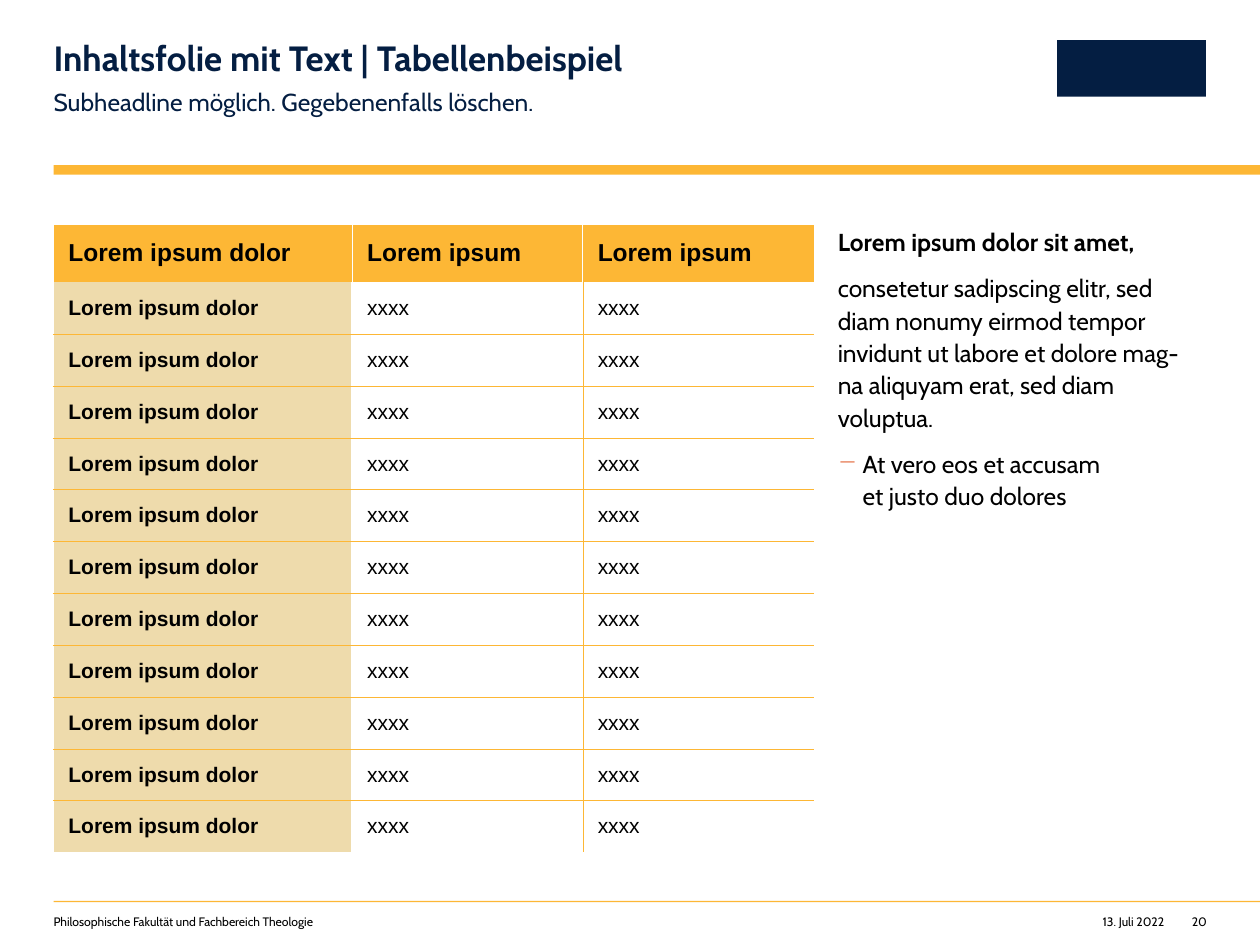
from copy import deepcopy

from lxml.etree import SubElement
from pptx import Presentation
from pptx.dml.color import RGBColor
from pptx.enum.shapes import MSO_SHAPE
from pptx.enum.text import MSO_ANCHOR, PP_ALIGN
from pptx.oxml.ns import qn
from pptx.util import Cm, Pt

# Content
COLORS = {"navy": "041E42", "orange": "FDB735", "sand": "EEDBAC",
          "rust": "E46D41", "black": "000000", "white": "FFFFFF"}
HEADINGS = ["Lorem ipsum dolor", "Lorem ipsum", "Lorem ipsum"]
ROWS = [["Lorem ipsum dolor", "xxxx", "xxxx"]] * 11

LEFT = 1.08
TABLE_TOP, TABLE_HEIGHT, HEADER_HEIGHT = 4.52, 12.67, 1.17
COLUMN_WIDTHS = [6.02, 4.65, 4.65]

# Left, top, width, height in cm
BARS = [
    ((LEFT, 3.33, 25.4 - LEFT, 0.19), "orange"),
    ((LEFT, 18.16, 25.4 - LEFT, 0.03), "orange"),
    ((21.31, 0.81, 3, 1.14), "navy"),  # logo placeholder
]

HEADLINE = {"size": 20, "bold": True, "color": "navy"}
SUBHEAD = {"size": 14, "color": "navy"}
BODY = {"size": 14}
SMALL = {"size": 7}
TIGHT = {"line_spacing": 0.9}
LOOSE = {"line_spacing": 1.1, "space_after": Pt(8)}
RIGHT = {"alignment": PP_ALIGN.RIGHT}

# Place, then paragraphs of text, font and paragraph format
TEXTS = [
    ((LEFT, 0.84, 14.25, 0.76),
     [("Inhaltsfolie mit Text | Tabellenbeispiel", HEADLINE, TIGHT)]),
    ((LEFT, 1.7, 14.25, 0.61),
     [("Subheadline möglich. Gegebenenfalls löschen.", SUBHEAD, LOOSE)]),
    ((16.89, TABLE_TOP, 6.93, TABLE_HEIGHT), [
        ("Lorem ipsum dolor sit amet,", {**BODY, "bold": True}, LOOSE),
        ("consetetur sadipscing elitr, sed diam nonumy eirmod tempor invidunt "
         "ut labore et dolore mag-na aliquyam erat, sed diam voluptua.", BODY, LOOSE),
        ("At vero eos et accusam\vet justo duo dolores", BODY, {**LOOSE, "level": 1}),
    ]),
    ((LEFT, 18.44, 11.4, 0.3),
     [("Philosophische Fakultät und Fachbereich Theologie", SMALL, {})]),
    ((21.97, 18.44, 1.5, 0.3), [("13. Juli 2022", SMALL, RIGHT)]),
    ((23.83, 18.44, 0.5, 0.3), [("20", SMALL, RIGHT)]),
]


def color(name):
    return RGBColor.from_string(COLORS[name])


def apply(target, values):
    for name, value in values.items():
        setattr(target, name, value)


def style_text(para, size, bold=False, font="Cabin", ink="black"):
    for span in para.runs:
        apply(span.font, {"name": font, "size": Pt(size), "bold": bold})
        span.font.color.rgb = color(ink)
    for line_break in para._p.findall(qn("a:br")):
        line_break.append(deepcopy(para.runs[0]._r.rPr))


def add_bullet(para):
    props = para._p.get_or_add_pPr()
    props.set("marL", str(Cm(0.5)))
    props.set("indent", str(-Cm(0.5)))
    tint = SubElement(props, qn("a:buClr"))
    SubElement(tint, qn("a:srgbClr"), val=COLORS["rust"])
    SubElement(props, qn("a:buChar"), char="−")


def set_border(cell, side, line):
    border = SubElement(cell._tc.get_or_add_tcPr(), qn(f"a:ln{side}"))
    if line is None:
        SubElement(border, qn("a:noFill"))
        return
    name, width = line
    border.set("w", str(Pt(width)))
    fill = SubElement(border, qn("a:solidFill"))
    SubElement(fill, qn("a:srgbClr"), val=COLORS[name])


def cell_borders(row, column):
    """Lines for left, right, top and bottom, in schema order."""
    thin, edge = ("orange", 0.25), ("white", 1)
    header, last = row == 0, row == len(ROWS)
    inner = ("white", 0.5) if header else thin
    first_gap = inner if header else edge
    verticals = [edge, first_gap, inner, None]
    return {"L": verticals[column], "R": verticals[column + 1],
            "T": edge if header else None if row == 1 else thin,
            "B": None if header or last else thin}


deck = Presentation()
deck.slide_width, deck.slide_height = Cm(25.4), Cm(19.05)
page = deck.slides.add_slide(deck.slide_layouts[6])

# Bars and logo block
for place, name in BARS:
    bar = page.shapes.add_shape(MSO_SHAPE.RECTANGLE, *map(Cm, place))
    bar.shadow.inherit = False
    bar.fill.solid()
    bar.fill.fore_color.rgb = color(name)
    bar.line.fill.background()

# Title, side text and footer
for place, paragraphs in TEXTS:
    box = page.shapes.add_textbox(*map(Cm, place))
    frame = box.text_frame
    apply(frame, {"word_wrap": True, "margin_left": 0, "margin_right": 0,
                  "margin_top": 0, "margin_bottom": 0})
    for index, (text, font, layout) in enumerate(paragraphs):
        para = frame.add_paragraph() if index else frame.paragraphs[0]
        para.text = text
        apply(para, layout)
        if para.level:
            add_bullet(para)
        style_text(para, font["size"], font.get("bold", False),
                   ink=font.get("color", "black"))

# Table
table = page.shapes.add_table(
    len(ROWS) + 1, len(HEADINGS), Cm(LEFT), Cm(TABLE_TOP),
    Cm(sum(COLUMN_WIDTHS)), Cm(TABLE_HEIGHT)).table
apply(table, {"first_row": False, "horz_banding": False})
for column, width in zip(table.columns, COLUMN_WIDTHS):
    column.width = Cm(width)
row_height = (TABLE_HEIGHT - HEADER_HEIGHT) / len(ROWS)

for row, values in enumerate([HEADINGS] + ROWS):
    header = row == 0
    table.rows[row].height = Cm(HEADER_HEIGHT if header else row_height)
    for column, value in enumerate(values):
        cell = table.cell(row, column)
        cell.text = value
        apply(cell, {"vertical_anchor": MSO_ANCHOR.MIDDLE,
                     "margin_left": Cm(0.3), "margin_right": Cm(0.3),
                     "margin_top": Cm(0.1), "margin_bottom": Cm(0.1)})
        style_text(cell.text_frame.paragraphs[0], 14 if header else 12,
                   header or column == 0, font="Arial")
        for side, line in cell_borders(row, column).items():
            set_border(cell, side, line)
        if header or column == 0:
            cell.fill.solid()
            cell.fill.fore_color.rgb = color("orange" if header else "sand")
        else:
            cell.fill.background()

deck.save("out.pptx")
